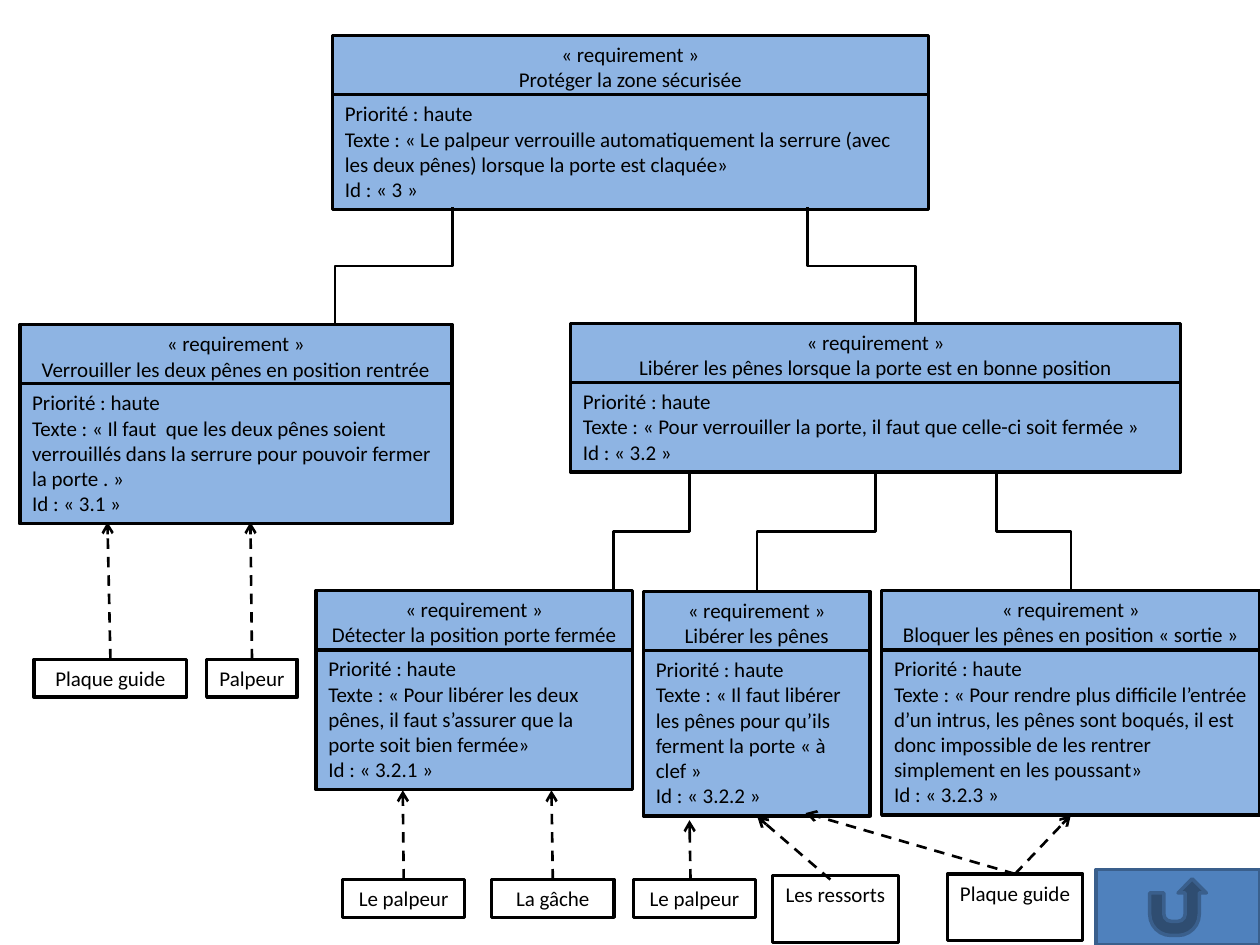
"""Build a requirement diagram for a door lock, with its components and return button."""
from lxml import etree
from pptx import Presentation
from pptx.dml.color import RGBColor
from pptx.enum.dml import MSO_LINE
from pptx.enum.shapes import MSO_CONNECTOR, MSO_SHAPE
from pptx.enum.text import MSO_ANCHOR, PP_ALIGN
from pptx.oxml.ns import qn
from pptx.util import Pt

RECTANGLE, RETURN_BUTTON = MSO_SHAPE.RECTANGLE, MSO_SHAPE.ACTION_BUTTON_RETURN
STRAIGHT, ELBOW = MSO_CONNECTOR.STRAIGHT, MSO_CONNECTOR.ELBOW
DASH, TOP = MSO_LINE.DASH, MSO_ANCHOR.TOP
LEFT, CENTER = PP_ALIGN.LEFT, PP_ALIGN.CENTER
TOP_SITE, BOTTOM_SITE = 0, 2
BLACK, BLUE = "000000", "8EB4E3"
FONT_FORMAT = {"name": "Calibri", "size": Pt(12)}
FRAME_FORMAT = {"word_wrap": True, "vertical_anchor": TOP}


def colour(value):
    return RGBColor.from_string(value)


def add_box(shapes, frame, lines, alignment=CENTER, fill=None, outline=BLACK, preset=RECTANGLE):
    box = shapes.add_shape(preset, *(Pt(length) for length in frame))
    box.shadow.inherit = False
    if fill:
        box.fill.solid()
        box.fill.fore_color.rgb = colour(fill)
    else:
        box.fill.background()
    box.line.color.rgb = colour(outline)
    box.line.width = Pt(2)
    for name, value in FRAME_FORMAT.items():
        setattr(box.text_frame, name, value)
    for index, line in enumerate(lines):
        para = box.text_frame.paragraphs[0] if index == 0 else box.text_frame.add_paragraph()
        para.alignment = alignment
        span = para.add_run()
        span.text = line
        for name, value in FONT_FORMAT.items():
            setattr(span.font, name, value)
        span.font.color.rgb = colour(BLACK)
    return box


deck = Presentation()
deck.slide_width, deck.slide_height = Pt(720), Pt(540)
page = deck.slides.add_slide(deck.slide_layouts[6])

requirements = [
    ("3", (190, 20.3, 340.5), 36.7, 65.5, "Protéger la zone sécurisée",
     "« Le palpeur verrouille automatiquement la serrure (avec les deux pênes) "
     "lorsque la porte est claquée»"),
    ("3.1", (11.3, 185.5, 247), 36.7, 80, "Verrouiller les deux pênes en position rentrée",
     "« Il faut  que les deux pênes soient verrouillés dans la serrure pour pouvoir "
     "fermer la porte . »"),
    ("3.2", (326, 184.8, 348.7), 36.7, 51, "Libérer les pênes lorsque la porte est en bonne position",
     "« Pour verrouiller la porte, il faut que celle-ci soit fermée »"),
    ("3.2.1", (180.5, 337.5, 181), 51, 80, "Détecter la position porte fermée",
     "« Pour libérer les deux pênes, il faut s’assurer que la porte soit bien fermée»"),
    ("3.2.2", (367.7, 338, 129.5), 36.7, 94.5, "Libérer les pênes",
     "« Il faut libérer les pênes pour qu’ils ferment la porte « à clef »"),
    ("3.2.3", (503.8, 337.5, 216.2), 51, 94.5, "Bloquer les pênes en position « sortie »",
     "« Pour rendre plus difficile l’entrée d’un intrus, les pênes sont boqués, il est donc "
     "impossible de les rentrer simplement en les poussant»"),
]
bodies = {}
for number, (left, top, width), head_height, body_height, title, text in requirements:
    group = page.shapes.add_group_shape()
    add_box(group.shapes, (left, top, width, head_height), ["« requirement »", title], fill=BLUE)
    bodies[number] = add_box(
        group.shapes, (left, top + 33.8, width, body_height),
        ["Priorité : haute", f"Texte : {text}", f"Id : « {number} »"], LEFT, BLUE)

components = [
    ("Plaque guide", (19.5, 376.8, 87.2, 21.6)),
    ("Palpeur", (118.1, 376.8, 51.8, 21.6)),
    ("Le palpeur", (195.8, 502.6, 69.8, 21.6)),
    ("La gâche", (281, 502.6, 69.8, 21.6)),
    ("Le palpeur", (362, 502.6, 69.8, 21.6)),
    ("Les ressorts", (441.4, 500.4, 72, 38.2)),
    ("Plaque guide", (541.4, 499.4, 77.3, 38.2)),
]
boxes = [add_box(page.shapes, frame, [name]) for name, frame in components]

connectors = []
branches = [
    (258.5, 118.5, 191.5, 185.5), (461.5, 118.5, 523, 185.5),
    (394, 270, 350.6, 337.5), (500.4, 270, 432.5, 337.5), (569.5, 270, 612, 337.5),
]
for start_x, start_y, end_x, end_y in branches:
    middle_x, middle_y = (start_x + end_x) / 2, (start_y + end_y) / 2
    half_drop, half_shift = (end_y - start_y) / 2, abs(end_x - start_x) / 2
    rightward = end_x > start_x
    reach = -half_drop if rightward else half_drop
    branch = page.shapes.add_connector(
        ELBOW, Pt(middle_x - reach), Pt(middle_y - half_shift),
        Pt(middle_x + reach), Pt(middle_y + half_shift))
    transform = branch._element.spPr.find(qn("a:xfrm"))
    transform.set("rot", str((270 if rightward else 90) * 60000))
    connectors.append((branch, False))

arrows = [
    (0, None, (61.4, 298.4), None), (1, None, (143.1, 298.4), None),
    (2, None, (230.2, 451.6), None), (3, None, (315.1, 451.6), None),
    (None, (394.6, 502.6), (394, 468.7), None), (None, (474.5, 502.6), (432.7, 466.6), None),
    (6, None, (460.3, 464.6), None), (6, None, (612, 465.8), "3.2.3"),
]
for source, start, end, target in arrows:
    arrow = page.shapes.add_connector(STRAIGHT, *(Pt(value) for value in (start or end) + end))
    if source is not None:
        arrow.begin_connect(boxes[source], TOP_SITE)
    if target:
        arrow.end_connect(bodies[target], BOTTOM_SITE)
    connectors.append((arrow, True))

for connector, is_arrow in connectors:
    connector.line.color.rgb = colour(BLACK)
    connector.line.width = Pt(1.5)
    properties = connector._element.spPr
    if is_arrow:
        connector.line.dash_style = DASH
        etree.SubElement(properties.find(qn("a:ln")), qn("a:tailEnd"), type="arrow")
    etree.SubElement(properties, qn("a:effectLst"))

add_box(page.shapes, (626.4, 496.8, 93.6, 43.2), [], fill="4F81BD", outline="3A5F8C",
        preset=RETURN_BUTTON)

deck.save("out.pptx")
